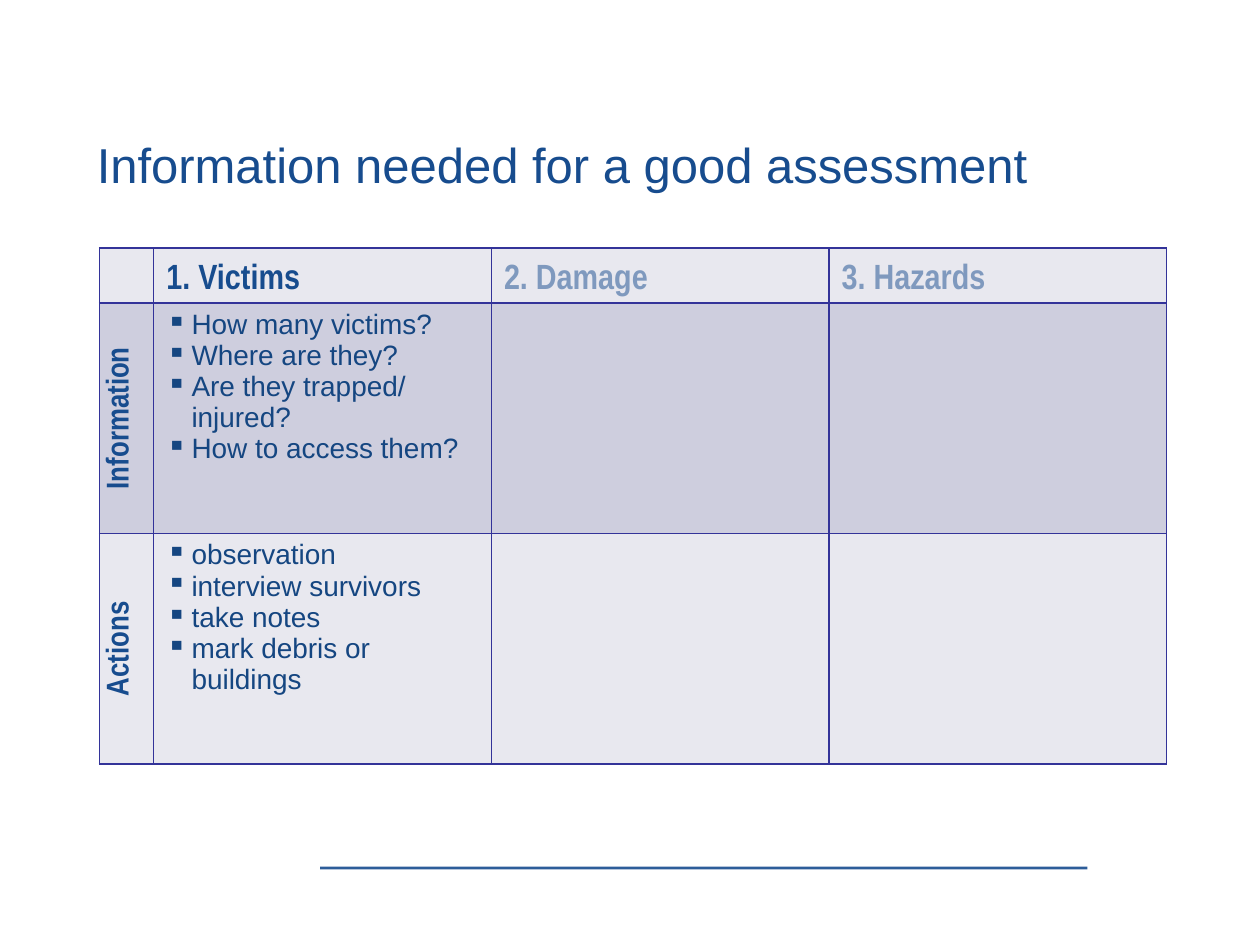
"""Build a slide with an assessment table of victims, damage and hazards."""
from lxml import etree
from pptx import Presentation
from pptx.dml.color import RGBColor
from pptx.enum.shapes import MSO_CONNECTOR
from pptx.enum.text import MSO_ANCHOR, PP_ALIGN
from pptx.oxml.ns import qn
from pptx.util import Inches, Pt

STRAIGHT = MSO_CONNECTOR.STRAIGHT
MIDDLE, BOTTOM = MSO_ANCHOR.MIDDLE, MSO_ANCHOR.BOTTOM
CENTER = PP_ALIGN.CENTER

TITLE = "Information needed for a good assessment"
HEADINGS = ["1. Victims", "2. Damage", "3. Hazards"]
ROWS = [
    ("Information", ["How many victims?", "Where are they?",
                     "Are they trapped/ injured?", "How to access them?"]),
    ("Actions", ["observation", "interview survivors", "take notes",
                 "mark debris or buildings"]),
]
COLORS = {"blue": "174C8E", "bullet": "154681", "border": "333399",
          "light": "E8E8EF", "dark": "CECEDE"}
ROW_FILLS = ["light", "dark", "light"]
COLUMN_WIDTHS = [0.43, 2.68, 2.68, 2.68]
ROW_HEIGHTS = [0.41, 1.83, 1.83]
FORMATS = {
    "title": {"size": Pt(28), "name": "Arial"},
    "heading": {"size": Pt(20), "name": "Arial Narrow", "bold": True},
    "label": {"size": Pt(18), "name": "Arial Narrow", "bold": True},
    "bullet": {"size": Pt(16), "name": "Arial", "bold": False},
}


def set_alpha(fill_parent, percent):
    color = fill_parent.find(".//" + qn("a:srgbClr"))
    etree.SubElement(color, qn("a:alpha"), val=str(percent * 1000))


def write(paragraph, text, style, color="blue"):
    run = paragraph.add_run()
    run.text = text
    for attribute, value in FORMATS[style].items():
        setattr(run.font, attribute, value)
    run.font.color.rgb = RGBColor.from_string(COLORS[color])
    return run


def write_bullets(frame, items):
    for index, item in enumerate(items):
        paragraph = frame.add_paragraph() if index else frame.paragraphs[0]
        properties = paragraph._p.get_or_add_pPr()
        properties.set("marL", str(Inches(0.2)))
        properties.set("indent", str(Inches(-0.2)))
        etree.SubElement(properties, qn("a:buChar"), char="▪")
        write(paragraph, item, "bullet", "bullet")


def style_cell(cell, fill):
    properties = cell._tc.get_or_add_tcPr()
    for side in ("lnL", "lnR", "lnT", "lnB"):
        border = etree.SubElement(properties, qn("a:" + side), w=str(Pt(1)))
        solid = etree.SubElement(border, qn("a:solidFill"))
        etree.SubElement(solid, qn("a:srgbClr"), val=COLORS["border"])
    cell.fill.solid()
    cell.fill.fore_color.rgb = RGBColor.from_string(COLORS[fill])


def add_footer_rule(slide):
    rule = slide.shapes.add_connector(
        STRAIGHT, Inches(2.54), Inches(6.89), Inches(8.63), Inches(6.89))
    rule.line.color.rgb = RGBColor.from_string(COLORS["blue"])
    rule.line.width = Pt(1.6)
    properties = rule._element.spPr
    set_alpha(properties, 90)
    etree.SubElement(properties, qn("a:effectLst"))


def add_title(slide):
    frame = slide.shapes.add_textbox(
        Inches(0.67), Inches(0.98), Inches(9.08), Inches(0.64)).text_frame
    layout = {"word_wrap": True, "vertical_anchor": MIDDLE,
              "margin_left": Inches(0.1), "margin_right": Inches(0.1),
              "margin_top": Inches(0.06), "margin_bottom": Inches(0.06)}
    for attribute, value in layout.items():
        setattr(frame, attribute, value)
    write(frame.paragraphs[0], TITLE, "title")


def add_assessment_table(slide):
    table = slide.shapes.add_table(
        len(ROW_HEIGHTS), len(COLUMN_WIDTHS), Inches(0.79), Inches(1.97),
        Inches(sum(COLUMN_WIDTHS)), Inches(sum(ROW_HEIGHTS))).table
    table.first_row = table.horz_banding = False
    for column, width in zip(table.columns, COLUMN_WIDTHS):
        column.width = Inches(width)
    for row, height, fill in zip(table.rows, ROW_HEIGHTS, ROW_FILLS):
        row.height = Inches(height)
        for cell in row.cells:
            style_cell(cell, fill)

    for index, heading in enumerate(HEADINGS):
        cell = table.cell(0, index + 1)
        cell.vertical_anchor = BOTTOM
        run = write(cell.text_frame.paragraphs[0], heading, "heading")
        if index:
            set_alpha(run._r, 50)

    for index, (label, items) in enumerate(ROWS, start=1):
        label_cell = table.cell(index, 0)
        label_cell._tc.get_or_add_tcPr().set("vert", "vert270")
        paragraph = label_cell.text_frame.paragraphs[0]
        paragraph.alignment = CENTER
        write(paragraph, label, "label")
        write_bullets(table.cell(index, 1).text_frame, items)


def main():
    deck = Presentation()
    deck.slide_width, deck.slide_height = Inches(10), Inches(7.5)
    slide = deck.slides.add_slide(deck.slide_layouts[6])
    add_footer_rule(slide)
    add_title(slide)
    add_assessment_table(slide)
    deck.save("out.pptx")


if __name__ == "__main__":
    main()
